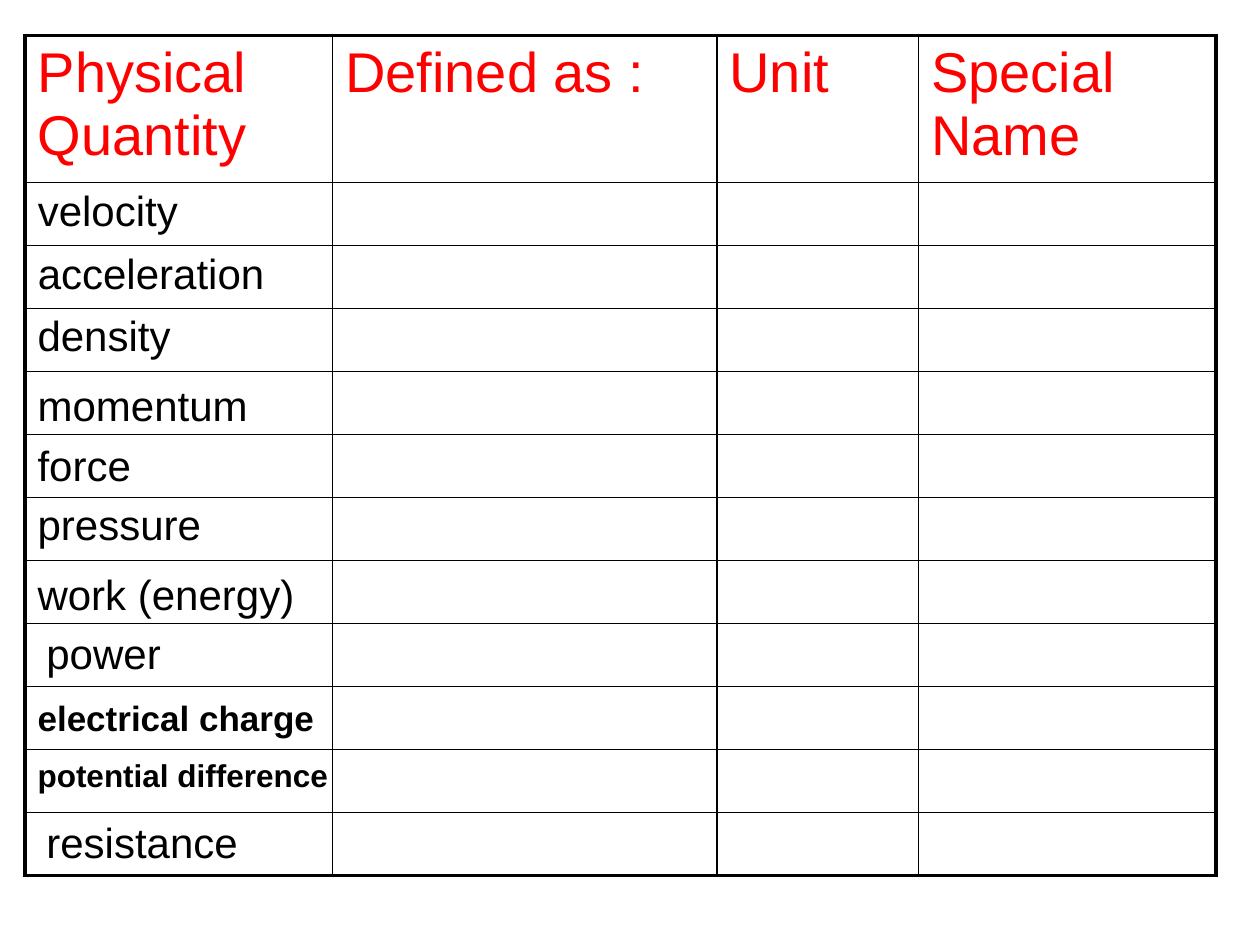
from lxml.etree import SubElement
from pptx import Presentation
from pptx.dml.color import RGBColor
from pptx.oxml.ns import qn
from pptx.util import Inches, Pt

COLORS = {"heading": "FF0000", "text": "000000", "border": "000000"}
HEADINGS = ["Physical Quantity", "Defined as :", "Unit", "Special Name"]
COLUMNS = [2.44, 3.05, 1.6, 2.36]
HEADER_HEIGHT, ROW_HEIGHT, ROW_COUNT = 1.17, 0.5, 12
LEFT, TOP = 0.2, 0.28
THIN, THICK = 1, 2.25

# Quantities written over the first column: text, left, top, width, format
PLAIN = {"size": Pt(24), "bold": False}
LABELS = [
    ("density", LEFT, 2.41, 2.76, PLAIN),
    ("momentum", LEFT, 2.96, 2.28, PLAIN),
    ("force", LEFT, 3.44, 2.91, PLAIN),
    ("pressure", LEFT, 3.91, 2.05, PLAIN),
    ("work (energy)", LEFT, 4.46, 2.44, PLAIN),
    ("power", 0.27, 4.93, 1.57, PLAIN),
    ("electrical charge", LEFT, 5.48, 2.91, {"size": Pt(20), "bold": True}),
    ("potential difference", LEFT, 5.95, 2.52, {"size": Pt(18), "bold": True}),
    ("resistance", 0.27, 6.43, 1.89, PLAIN),
]


def write(frame, text, color, formats):
    span = frame.paragraphs[0].add_run()
    span.text = text
    span.font.color.rgb = RGBColor.from_string(COLORS[color])
    for name, value in {"name": "Arial", **formats}.items():
        setattr(span.font, name, value)


def draw_borders(cell, widths):
    """Draw the cell's sides; widths maps L, R, T and B, in that order, to points."""
    properties = cell._tc.get_or_add_tcPr()
    for side, width in widths.items():
        line = SubElement(properties, qn(f"a:ln{side}"), w=str(Pt(width)))
        fill = SubElement(line, qn("a:solidFill"))
        SubElement(fill, qn("a:srgbClr"), val=COLORS["border"])


deck = Presentation()
deck.slide_width, deck.slide_height = Inches(10), Inches(7.5)
page = deck.slides.add_slide(deck.slide_layouts[6])

last_row, last_column = ROW_COUNT - 1, len(COLUMNS) - 1
table = page.shapes.add_table(
    ROW_COUNT, len(COLUMNS), Inches(LEFT), Inches(TOP),
    Inches(sum(COLUMNS)), Inches(HEADER_HEIGHT + last_row * ROW_HEIGHT),
).table
table.first_row = table.horz_banding = False
for column, width in zip(table.columns, COLUMNS):
    column.width = Inches(width)
for r, row in enumerate(table.rows):
    row.height = Inches(ROW_HEIGHT if r else HEADER_HEIGHT)
    for c, cell in enumerate(row.cells):
        draw_borders(cell, {
            "L": THICK if c == 0 else THIN,
            "R": THICK if c == last_column else THIN,
            "T": THICK if r == 0 else THIN,
            "B": THICK if r == last_row else THIN,
        })
        cell.fill.background()

for c, heading in enumerate(HEADINGS):
    write(table.cell(0, c).text_frame, heading, "heading", {"size": Pt(32)})
for r, quantity in enumerate(["velocity", "acceleration"], start=1):
    write(table.cell(r, 0).text_frame, quantity, "text", PLAIN)

for text, left, top, width, formats in LABELS:
    box = page.shapes.add_textbox(
        Inches(left), Inches(top), Inches(width), Inches(ROW_HEIGHT))
    box.text_frame.word_wrap = True
    write(box.text_frame, text, "text", formats)

deck.save("out.pptx")
